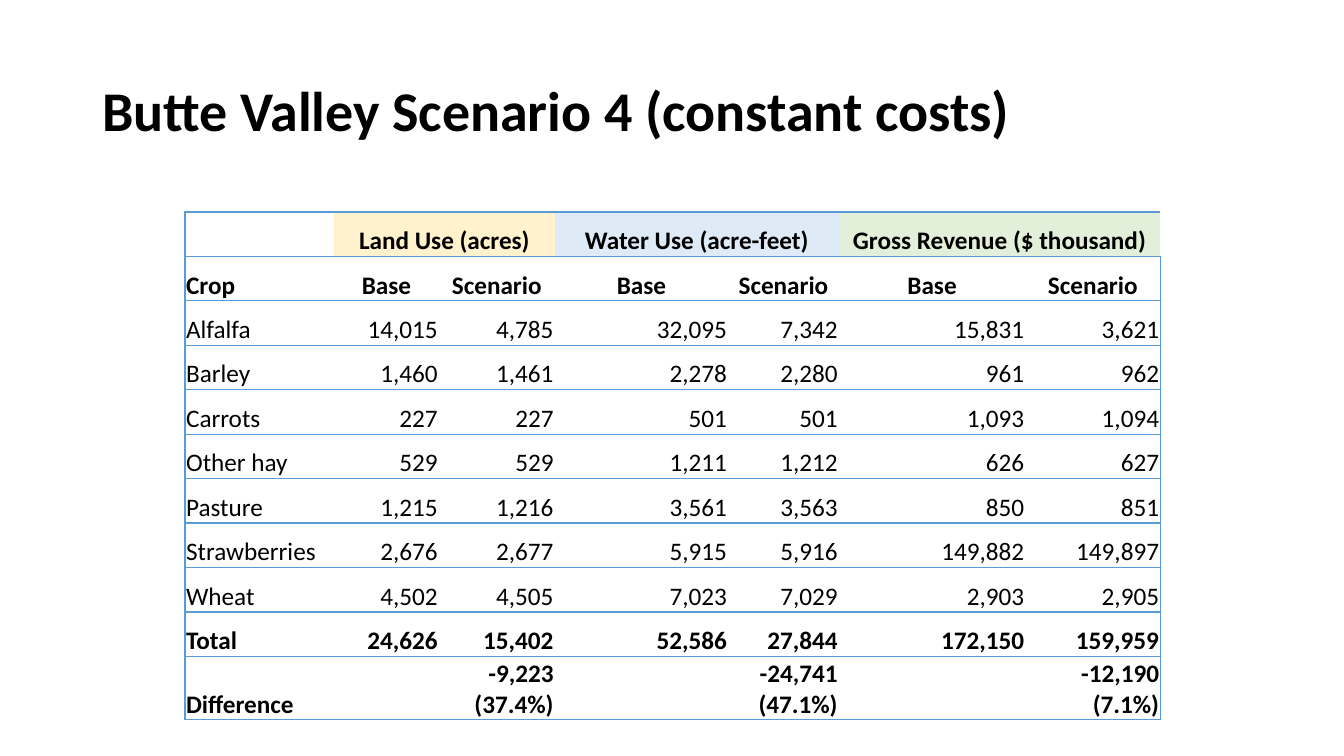
from dataclasses import dataclass

from lxml.etree import SubElement
from pptx import Presentation
from pptx.dml.color import RGBColor
from pptx.enum.text import MSO_ANCHOR, PP_ALIGN
from pptx.oxml.ns import qn
from pptx.util import Cm, Pt


@dataclass(frozen=True)
class Theme:
    font: str = "Calibri"
    title_size: int = 40
    table_size: int = 18
    ink: str = "000000"
    paper: str = "FFFFFF"
    rule: str = "5B9BD5"
    land: str = "FFF2CC"
    water: str = "DEEBF7"
    revenue: str = "E2F0D9"


THEME = Theme()
COLUMN_WIDTHS = (3.76, 2.64, 2.92, 4.37, 2.79, 4.7, 3.4)
ROW_HEIGHT = 1.12
DIFFERENCE_HEIGHT = 1.6
MEASURES = (
    ("Land Use (acres)", THEME.land),
    ("Water Use (acre-feet)", THEME.water),
    ("Gross Revenue ($ thousand)", THEME.revenue),
)
HEADINGS = ("Crop",) + ("Base", "Scenario") * len(MEASURES)
CROPS = (
    ("Alfalfa", "14,015", "4,785", "32,095", "7,342", "15,831", "3,621"),
    ("Barley", "1,460", "1,461", "2,278", "2,280", "961", "962"),
    ("Carrots", "227", "227", "501", "501", "1,093", "1,094"),
    ("Other hay", "529", "529", "1,211", "1,212", "626", "627"),
    ("Pasture", "1,215", "1,216", "3,561", "3,563", "850", "851"),
    ("Strawberries", "2,676", "2,677", "5,915", "5,916", "149,882", "149,897"),
    ("Wheat", "4,502", "4,505", "7,023", "7,029", "2,903", "2,905"),
)
SUMMARY = (
    ("Total", "24,626", "15,402", "52,586", "27,844", "172,150", "159,959"),
    ("Difference", "", "-9,223 (37.4%)", "", "-24,741 (47.1%)", "", "-12,190 (7.1%)"),
)


def write(frame, text, size=THEME.table_size, bold=False, align=PP_ALIGN.LEFT, spacing=None):
    paragraph = frame.paragraphs[0]
    paragraph.alignment = align
    paragraph.line_spacing = spacing
    paragraph.font.size = Pt(size)
    if text:
        run = paragraph.add_run()
        run.text = text
        run.font.name = THEME.font
        run.font.size = Pt(size)
        run.font.bold = bold
        run.font.color.rgb = RGBColor.from_string(THEME.ink)


def add_title(slide, text):
    title = slide.shapes.add_textbox(Cm(2.33), Cm(1.01), Cm(29.21), Cm(3.68))
    title.text_frame.word_wrap = True
    title.text_frame.vertical_anchor = MSO_ANCHOR.MIDDLE
    write(title.text_frame, text, size=THEME.title_size, bold=True, spacing=0.9)


def rule_cell(cell, visible_sides):
    properties = cell._tc.get_or_add_tcPr()
    for side in "LRTB":
        edge = SubElement(properties, qn(f"a:ln{side}"), w=str(Pt(1)))
        if side in visible_sides:
            fill = SubElement(edge, qn("a:solidFill"))
            SubElement(fill, qn("a:srgbClr"), val=THEME.rule)
        else:
            SubElement(edge, qn("a:noFill"))


def prepare_cell(cell, visible_sides):
    rule_cell(cell, visible_sides)
    cell.fill.solid()
    cell.fill.fore_color.rgb = RGBColor.from_string(THEME.paper)
    cell.vertical_anchor = MSO_ANCHOR.BOTTOM
    cell.margin_left = cell.margin_right = cell.margin_top = Cm(0.03)
    cell.margin_bottom = 0


def add_results_table(slide):
    body = (HEADINGS,) + CROPS + SUMMARY
    row_count, column_count = len(body) + 1, len(COLUMN_WIDTHS)
    heights = [ROW_HEIGHT] * (row_count - 1) + [DIFFERENCE_HEIGHT]
    results = slide.shapes.add_table(
        row_count, column_count, Cm(4.66), Cm(5.34), Cm(sum(COLUMN_WIDTHS)), Cm(sum(heights))
    ).table
    results.first_row = results.horz_banding = False
    for column, width in zip(results.columns, COLUMN_WIDTHS):
        column.width = Cm(width)
    for row, height in zip(results.rows, heights):
        row.height = Cm(height)
        for index, cell in enumerate(row.cells):
            outer_side = {0: "L", column_count - 1: "R"}.get(index, "")
            prepare_cell(cell, "TB" + outer_side)

    for index, (measure, color) in enumerate(MEASURES):
        first = 1 + 2 * index
        heading = results.cell(0, first)
        heading.merge(results.cell(0, first + 1))
        heading.fill.fore_color.rgb = RGBColor.from_string(color)
        write(heading.text_frame, measure, bold=True, align=PP_ALIGN.CENTER)

    for row_index, values in enumerate(body, start=1):
        value_align = PP_ALIGN.CENTER if values is HEADINGS else PP_ALIGN.RIGHT
        for column_index, value in enumerate(values):
            write(
                results.cell(row_index, column_index).text_frame,
                value,
                bold=values not in CROPS,
                align=value_align if column_index else PP_ALIGN.LEFT,
            )


def main():
    presentation = Presentation()
    presentation.slide_width = Cm(33.87)
    presentation.slide_height = Cm(19.05)
    slide = presentation.slides.add_slide(presentation.slide_layouts[6])
    add_title(slide, "Butte Valley Scenario 4 (constant costs)")
    add_results_table(slide)
    presentation.save("out.pptx")


if __name__ == "__main__":
    main()
